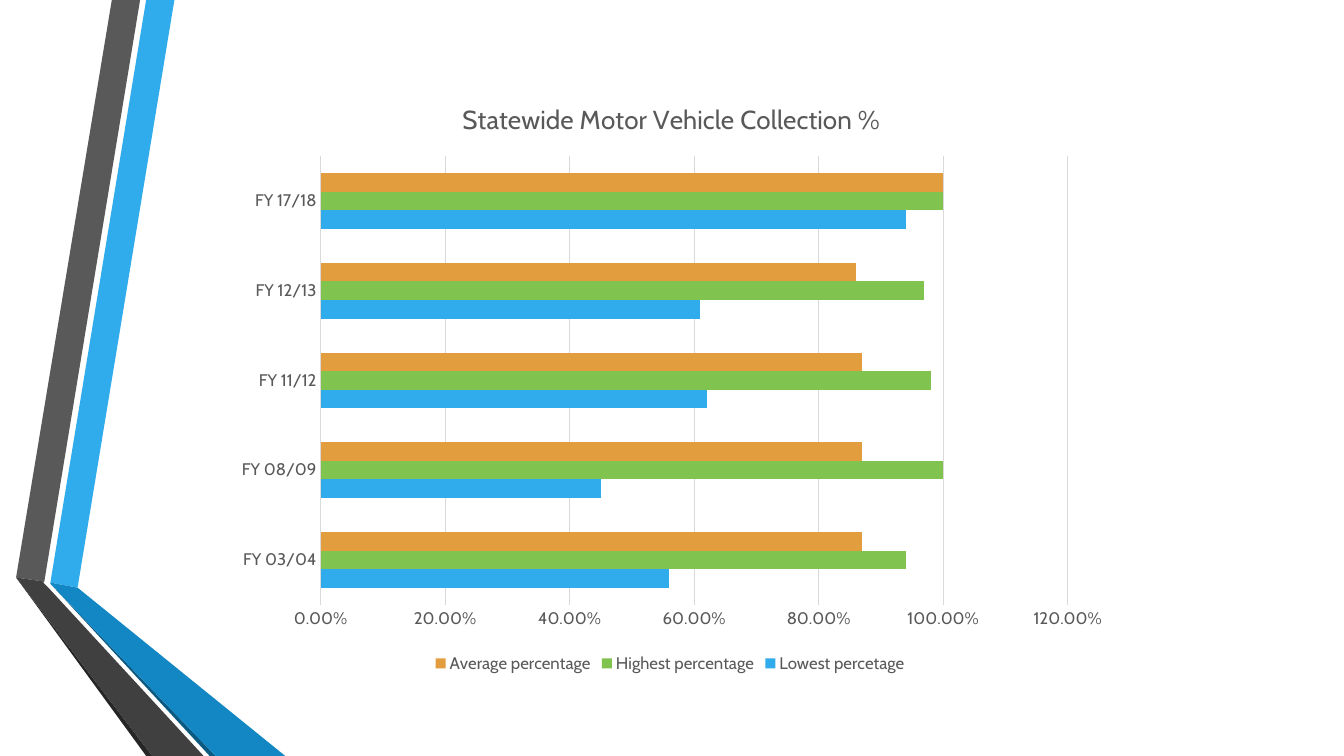
from lxml import etree
from pptx import Presentation
from pptx import util as u
from pptx.chart.data import CategoryChartData
from pptx.dml.color import RGBColor
from pptx.enum import chart as ch
from pptx.oxml.ns import qn

FONT = "Cabin"
GREY, RULE = "595959", "D9D9D9"
RIBBONS = [
    ("30ACEC", [(0.5, 5.78), (0.77, 5.83), (1.73, 0), (1.45, 0)]),
    (GREY, [(1.39, 0), (1.11, 0), (0.16, 5.73), (0.44, 5.77)]),
    ("262626", [(0.16, 5.73), (1.45, 7.5), (1.51, 7.5)]),
    ("0C5A82", [(0.5, 5.79), (2.08, 7.5), (2.14, 7.5)]),
    ("1287C3", [(0.5, 5.79), (2.14, 7.5), (2.83, 7.5), (0.77, 5.83), (0.5, 5.78)]),
    ("404040", [(2.02, 7.5), (0.48, 5.83), (0.43, 5.78), (0.44, 5.77),
                (0.16, 5.73), (1.51, 7.5)]),
]
YEARS = ["FY 03/04", "FY 08/09", "FY 11/12", "FY 12/13", "FY 17/18"]
SERIES = [
    ("Lowest percetage ", "30ACEC", [0.56, 0.45, 0.62, 0.61, 0.94]),
    ("Highest percentage", "80C34F", [0.94, 1, 0.98, 0.97, 1]),
    ("Average percentage", "E29D3E", [0.87, 0.87, 0.87, 0.86, 1]),
]


def paint(fmt, color):
    """Give a fill a solid colour."""
    fmt.solid()
    fmt.fore_color.rgb = RGBColor.from_string(color)


def style_font(font, size):
    """Set the chart typeface, size and grey."""
    font.name, font.size, font.bold = FONT, u.Pt(size), False
    paint(font.fill, GREY)


def style_line(line):
    """Make a line a thin pale rule."""
    line.width = u.Pt(0.75)
    paint(line.fill, RULE)


def place(parent, width, height, **inches):
    """Fix a chart part, in inches, within a chart of the given size."""
    layout = parent.find(qn("c:layout"))
    if layout is None:
        layout = etree.Element(qn("c:layout"))
        parent.insert(0, layout)
    manual = etree.SubElement(layout, qn("c:manualLayout"))
    if "w" in inches:
        etree.SubElement(manual, qn("c:layoutTarget")).set("val", "inner")
    for side in ("x", "y"):
        etree.SubElement(manual, qn(f"c:{side}Mode")).set("val", "edge")
    for name, value in inches.items():
        share = value / (width if name in "xw" else height)
        etree.SubElement(manual, qn(f"c:{name}")).set("val", str(share))


def add_ribbons(slide, left, top):
    """Draw the folded ribbons from the given corner."""
    for color, outline in RIBBONS:
        points = [(u.Inches(left + x), u.Inches(top + y)) for x, y in outline]
        builder = slide.shapes.build_freeform(*points[0])
        builder.add_line_segments(points[1:], close=True)
        sp = builder.convert_to_shape()
        sp.shadow.inherit = False
        paint(sp.fill, color)
        sp.line.fill.background()


def style_axes(chart):
    """Style both axes and the gridlines."""
    for axis in (chart.category_axis, chart.value_axis):
        axis.major_tick_mark = axis.minor_tick_mark = ch.XL_TICK_MARK.NONE
        style_font(axis.tick_labels.font, 12)
    style_line(chart.category_axis.format.line)
    values = chart.value_axis
    values.minimum_scale, values.maximum_scale, values.major_unit = 0, 1.2, 0.2
    values.format.line.fill.background()
    values.has_major_gridlines = True
    style_line(values.major_gridlines.format.line)
    values.tick_labels.number_format = "0.00%"
    values.tick_labels.number_format_is_linked = False


def add_collection_chart(slide, left, top, width, height):
    """Place the bar chart of collection rates in the box."""
    data = CategoryChartData(number_format="0.00%")
    data.categories = YEARS
    for name, _, rates in SERIES:
        data.add_series(name, rates)
    box = [u.Inches(n) for n in (left, top, width, height)]
    chart = slide.shapes.add_chart(ch.XL_CHART_TYPE.BAR_CLUSTERED, *box, data).chart
    style_font(chart.font, 10)

    chart.has_title = True
    p = chart.chart_title.text_frame.paragraphs[0]
    p.text = "Statewide Motor Vehicle Collection %"
    style_font(p.font, 18.6)
    chart.chart_title.include_in_layout = False

    chart.has_legend = True
    chart.legend.position = ch.XL_LEGEND_POSITION.BOTTOM
    chart.legend.include_in_layout = False
    style_font(chart.legend.font, 12)

    plot = chart.plots[0]
    plot.gap_width, plot.overlap, plot.vary_by_categories = 182, 0, False
    for series, (_, color, _) in zip(plot.series, SERIES):
        paint(series.format.fill, color)
        series.invert_if_negative = False
    style_axes(chart)

    root = chart._chartSpace.find(qn("c:chart"))
    place(root.find(qn("c:title")), width, height, x=2.32, y=0.17)
    place(root.find(qn("c:plotArea")), width, height, x=0.96, y=0.76, w=7.41, h=4.45)


def main():
    """Build and save the slide."""
    prs = Presentation()
    prs.slide_width, prs.slide_height = u.Inches(13.33), u.Inches(7.5)
    slide = prs.slides.add_slide(prs.slide_layouts[6])
    add_ribbons(slide, 0, 0)
    add_collection_chart(slide, 2.22, 0.79, 8.89, 5.93)
    prs.save("out.pptx")


if __name__ == "__main__":
    main()
